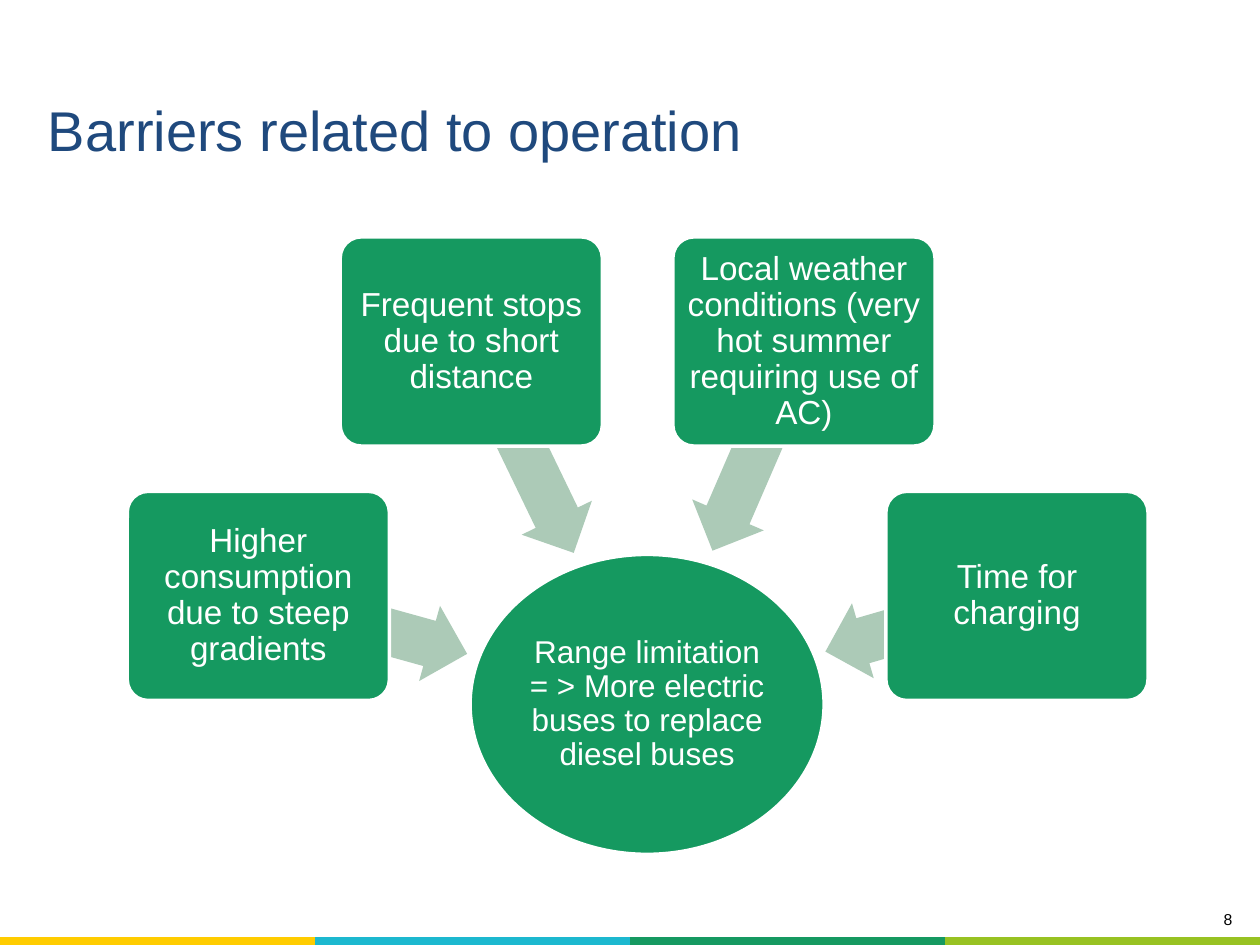
from pptx import Presentation
from pptx.dml.color import RGBColor
from pptx.enum.shapes import MSO_SHAPE
from pptx.enum.text import MSO_ANCHOR, PP_ALIGN
from pptx.oxml.ns import qn
from pptx.util import Pt

GREEN = RGBColor(0x15, 0x99, 0x60)
PALE = RGBColor(0xAC, 0xCA, 0xB7)
NAVY = RGBColor(0x1F, 0x49, 0x7D)
WHITE = RGBColor(0xFF, 0xFF, 0xFF)
BLACK = RGBColor(0, 0, 0)
BANDS = [RGBColor(0xFF, 0xCC, 0x00), RGBColor(0x1C, 0xB8, 0xCF),
         RGBColor(0x15, 0x99, 0x61), RGBColor(0x98, 0xC2, 0x22)]

TITLE = "Barriers related to operation"
PAGE = "8"
HUB = "Range limitation = > More electric buses to replace diesel buses"
HIGH, LOW = 135.4, 280.8  # tops of the two rows of boxes
BOX_W, BOX_H = 149.8, 119.5
ARROW_H = 44.6
# text, box left, box top, arrow left, arrow top, arrow length, arrow turn
CAUSES = [
    ("Higher consumption due to steep gradients",
     72.7, LOW, 145.4, 334.8, 123.8, 195.5),
    ("Frequent stops due to short distance",
     194.4, HIGH, 231.8, 233.3, 133.9, 244.2),
    ("Local weather conditions (very hot summer requiring use of AC)",
     384.5, HIGH, 367.9, 232.6, 130.3, 293.4),
    ("Time for charging",
     506.2, LOW, 469.4, 334.1, 114.5, 343.8),
]


def write(frame, text, size, color, align, inset):
    frame.word_wrap = True
    frame.vertical_anchor = MSO_ANCHOR.MIDDLE
    frame.margin_left = frame.margin_right = Pt(inset)
    frame.margin_top = frame.margin_bottom = Pt(inset)
    para = frame.paragraphs[0]
    para.alignment = align
    run = para.add_run()
    run.text = text
    run.font.size = Pt(size)
    run.font.name = "Arial"
    run.font.color.rgb = color
    return para


def draw(slide, kind, area, fill):
    shape = slide.shapes.add_shape(kind, *map(Pt, area))
    shape.shadow.inherit = False
    shape.fill.solid()
    shape.fill.fore_color.rgb = fill
    shape.line.fill.background()
    return shape


def add_node(slide, kind, area, text, size, inset):
    node = draw(slide, kind, area, GREEN)
    node.line.color.rgb = WHITE
    node.line.width = Pt(2)
    para = write(node.text_frame, text, size, WHITE, PP_ALIGN.CENTER, inset)
    para.line_spacing = 0.9
    return node


def add_bands(slide):
    """Colour strip along the foot of the slide."""
    area = map(Pt, (0, 535.7, 720, 12))
    table = slide.shapes.add_table(1, len(BANDS), *area).table
    table.first_row = table.horz_banding = False
    style = table._tbl.tblPr.find(qn("a:tableStyleId"))
    style.text = "{2D5ABB26-0587-4C30-8999-92F81FD0307C}"  # no style, no grid
    for cell, color in zip(table.iter_cells(), BANDS):
        cell.fill.solid()
        cell.fill.fore_color.rgb = color


def main():
    deck = Presentation()
    deck.slide_width, deck.slide_height = Pt(720), Pt(540)
    slide = deck.slides.add_slide(deck.slide_layouts[5])

    add_bands(slide)
    page = slide.shapes.add_textbox(Pt(569.5), Pt(514), Pt(141.8), Pt(22.3))
    write(page.text_frame, PAGE, 9, BLACK, PP_ALIGN.RIGHT, 7.2)

    title = slide.shapes.title
    title.left, title.top = Pt(20.2), Pt(26.6)
    title.width, title.height = Pt(612), Pt(94.3)
    write(title.text_frame, TITLE, 32, NAVY, PP_ALIGN.LEFT, 7.2)

    hub = (268.6, 316.8, 202.3, 171.4)
    add_node(slide, MSO_SHAPE.OVAL, hub, HUB, 18, 0.7)
    for text, left, top, x, y, length, turn in CAUSES:
        arrow = draw(slide, MSO_SHAPE.LEFT_ARROW,
                     (x, y, length, ARROW_H), PALE)
        arrow.adjustments[0] = 0.6
        arrow.adjustments[1] = 0.5
        arrow.rotation = turn
        box = add_node(slide, MSO_SHAPE.ROUNDED_RECTANGLE,
                       (left, top, BOX_W, BOX_H), text, 19, 2.9)
        box.adjustments[0] = 0.1

    deck.save("out.pptx")


if __name__ == "__main__":
    main()
